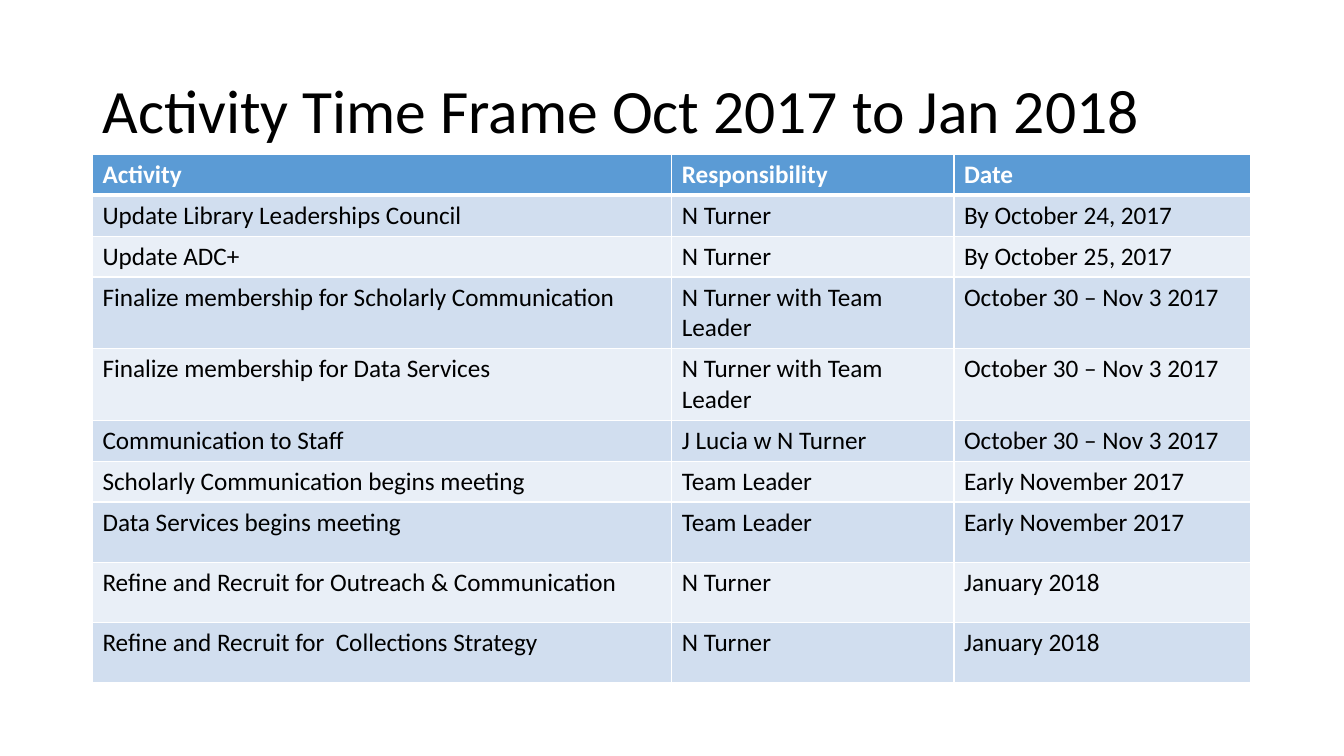
from dataclasses import dataclass

from lxml import etree
from pptx import Presentation
from pptx.dml.color import RGBColor
from pptx.enum.text import MSO_ANCHOR, PP_ALIGN
from pptx.oxml.ns import qn
from pptx.slide import Slide
from pptx.table import _Cell
from pptx.text.text import TextFrame
from pptx.util import Cm, Pt

MIDDLE = MSO_ANCHOR.MIDDLE
LEFT_ALIGNED = PP_ALIGN.LEFT
FONT = "Calibri"
BLACK = RGBColor(0x00, 0x00, 0x00)
WHITE = RGBColor(0xFF, 0xFF, 0xFF)
HEADER_BLUE = RGBColor(0x5B, 0x9B, 0xD5)
BAND_DARK = RGBColor(0xD1, 0xDE, 0xEF)
BAND_LIGHT = RGBColor(0xE9, 0xEF, 0xF7)
THIN, THICK = 0.96, 3
LEFT = Cm(2.33)
COLUMN_WIDTHS = (14.6, 7.11, 7.47)
TABLE_HEIGHT = 13.46
SINGLE, MEDIUM, DOUBLE = 0.86, 0.91, 1.52


@dataclass(frozen=True)
class Activity:
    name: str
    responsibility: str
    date: str
    height: float = SINGLE


HEADER = Activity("Activity", "Responsibility", "Date")
ACTIVITIES = (
    Activity("Update Library Leaderships Council", "N Turner", "By October 24, 2017"),
    Activity("Update ADC+", "N Turner", "By October 25, 2017", MEDIUM),
    Activity("Finalize membership for Scholarly Communication",
             "N Turner with Team Leader", "October 30 – Nov 3 2017", DOUBLE),
    Activity("Finalize membership for Data Services",
             "N Turner with Team Leader", "October 30 – Nov 3 2017", DOUBLE),
    Activity("Communication to Staff", "J Lucia w N Turner", "October 30 – Nov 3 2017"),
    Activity("Scholarly Communication begins meeting", "Team Leader",
             "Early November 2017"),
    Activity("Data Services begins meeting", "Team Leader",
             "Early November 2017", DOUBLE),
    Activity("Refine and Recruit for Outreach & Communication", "N Turner",
             "January 2018", DOUBLE),
    Activity("Refine and Recruit for  Collections Strategy", "N Turner",
             "January 2018", DOUBLE),
)


def write(frame: TextFrame, text: str, size: float, color: RGBColor, bold: bool) -> None:
    frame.text = text
    for para in frame.paragraphs:
        for span in para.runs:
            span.font.name = FONT
            span.font.size = Pt(size)
            span.font.bold = bold
            span.font.color.rgb = color


def add_borders(cell: _Cell, top: float, bottom: float) -> None:
    properties = cell._tc.get_or_add_tcPr()
    sides = {"a:lnL": THIN, "a:lnR": THIN, "a:lnT": top, "a:lnB": bottom}
    for tag, width in sides.items():
        line = etree.SubElement(properties, qn(tag), w=str(Pt(width)))
        fill = etree.SubElement(line, qn("a:solidFill"))
        etree.SubElement(fill, qn("a:srgbClr"), val=str(WHITE))


def add_title(page: Slide) -> None:
    title = page.shapes.title
    title.left, title.top, title.width, title.height = LEFT, Cm(1.01), Cm(29.21), Cm(3.68)
    frame = title.text_frame
    frame.word_wrap = True
    frame.vertical_anchor = MIDDLE
    write(frame, "Activity Time Frame Oct 2017 to Jan 2018", 44, BLACK, False)
    para = frame.paragraphs[0]
    para.line_spacing = 0.9
    para.alignment = LEFT_ALIGNED


def add_schedule(page: Slide) -> None:
    rows = (HEADER, *ACTIVITIES)
    box = page.shapes.add_table(len(rows), len(COLUMN_WIDTHS), LEFT, Cm(3.89),
                                Cm(sum(COLUMN_WIDTHS)), Cm(TABLE_HEIGHT))
    table = box.table
    for column, width in zip(table.columns, COLUMN_WIDTHS):
        column.width = Cm(width)
    for index, (row, activity) in enumerate(zip(table.rows, rows)):
        row.height = Cm(activity.height)
        is_header = index == 0
        band = BAND_DARK if index % 2 else BAND_LIGHT
        texts = (activity.name, activity.responsibility, activity.date)
        for cell, text in zip(row.cells, texts):
            write(cell.text_frame, text, 18, WHITE if is_header else BLACK, is_header)
            add_borders(cell, THICK if index == 1 else THIN, THICK if is_header else THIN)
            cell.fill.solid()
            cell.fill.fore_color.rgb = HEADER_BLUE if is_header else band
    box.height = Cm(TABLE_HEIGHT)


def main() -> None:
    deck = Presentation()
    deck.slide_width, deck.slide_height = Cm(33.87), Cm(19.05)
    page = deck.slides.add_slide(deck.slide_layouts.get_by_name("Title Only"))
    add_title(page)
    add_schedule(page)
    deck.save("out.pptx")


if __name__ == "__main__":
    main()
